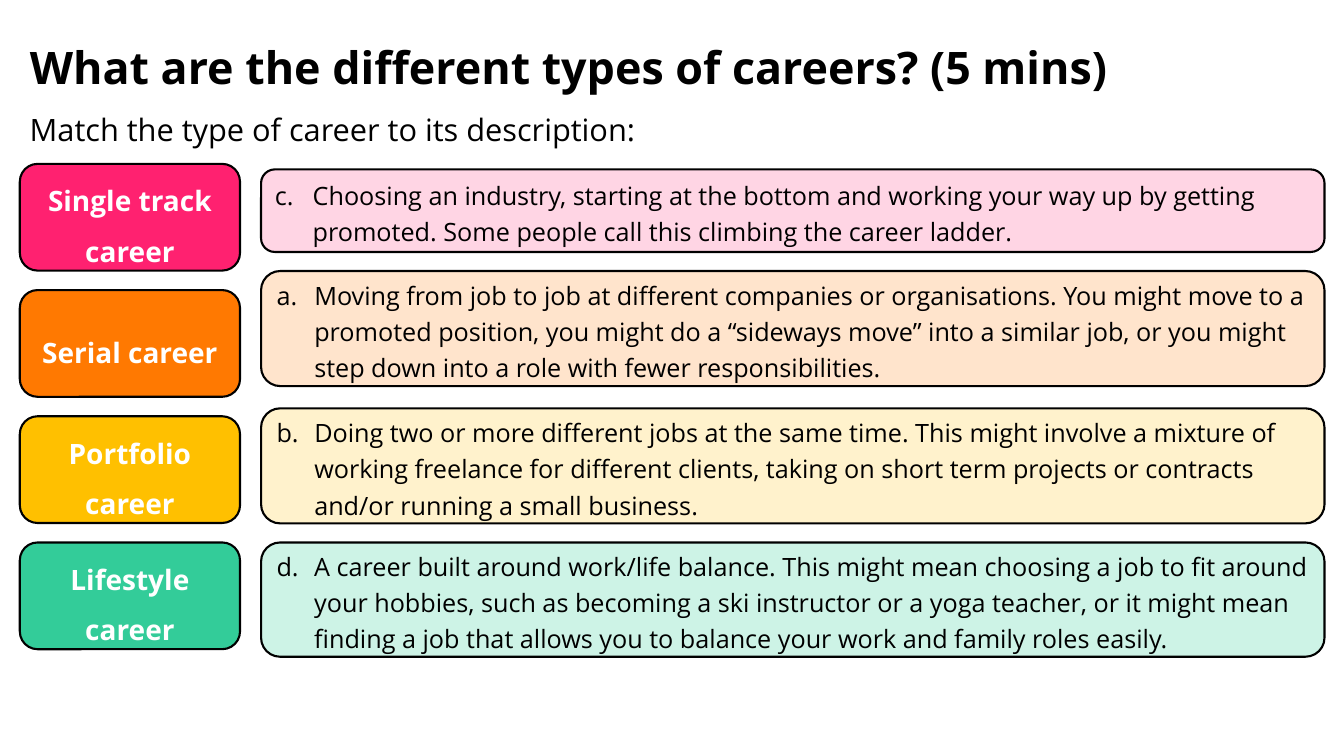
import pptx
import pptx.dml.color
import pptx.enum.shapes
import pptx.enum.text
import pptx.oxml.ns
import pptx.util
from lxml import etree

Cm = pptx.util.Cm
Pt = pptx.util.Pt
RGBColor = pptx.dml.color.RGBColor
PP_ALIGN = pptx.enum.text.PP_ALIGN
MSO_ANCHOR = pptx.enum.text.MSO_ANCHOR

FONT = "Open Sans"
BLACK = RGBColor(0x00, 0x00, 0x00)
WHITE = RGBColor(0xFF, 0xFF, 0xFF)
PINK = RGBColor(0xFF, 0x21, 0x70)
ORANGE = RGBColor(0xFF, 0x79, 0x01)
YELLOW = RGBColor(0xFF, 0xC0, 0x00)
GREEN = RGBColor(0x33, 0xCC, 0x99)
PALE_PINK = RGBColor(0xFF, 0xD5, 0xE4)
PALE_ORANGE = RGBColor(0xFF, 0xE4, 0xCC)
PALE_YELLOW = RGBColor(0xFF, 0xF2, 0xCC)
PALE_GREEN = RGBColor(0xCD, 0xF3, 0xE6)

CAREERS = [
    ("Single track career", PINK, 8),
    ("Serial career", ORANGE, 0),
    ("Portfolio career", YELLOW, 8),
    ("Lifestyle career", GREEN, 8),
]
DESCRIPTIONS = [
    (3, 0.14, 2.08, PALE_PINK,
     "Choosing an industry, starting at the bottom and working your way up by "
     "getting promoted. Some people call this climbing the career ladder."),
    (1, 2.7, 2.9, PALE_ORANGE,
     "Moving from job to job at different companies or organisations. You might "
     "move to a promoted position, you might do a “sideways move” into a similar "
     "job, or you might step down into a role with fewer responsibilities."),
    (2, 6.16, 2.9, PALE_YELLOW,
     "Doing two or more different jobs at the same time. This might involve a "
     "mixture of working freelance for different clients, taking on short term "
     "projects or contracts and/or running a small business."),
    (4, 9.54, 2.88, PALE_GREEN,
     "A career built around work/life balance. This might mean choosing a job to "
     "fit around your hobbies, such as becoming a ski instructor or a yoga teacher, "
     "or it might mean finding a job that allows you to balance your work and "
     "family roles easily."),
]


def write_text(s, text, size, color=BLACK, bold=False, align=PP_ALIGN.LEFT,
               anchor=MSO_ANCHOR.MIDDLE, spacing=1.0, after=0, letter=None):
    """Fill a shape with one formatted paragraph, lettered if a number is given."""
    tf = s.text_frame
    tf.word_wrap = True
    tf.auto_size = pptx.enum.text.MSO_AUTO_SIZE.NONE
    tf.vertical_anchor = anchor
    p = tf.paragraphs[0]
    if letter:
        pPr = p._p.get_or_add_pPr()
        pPr.set("marL", str(Cm(0.95)))
        pPr.set("indent", str(-Cm(0.95)))
        etree.SubElement(pPr, pptx.oxml.ns.qn("a:buAutoNum"),
                         type="alphaLcPeriod", startAt=str(letter))
    p.alignment = align
    p.line_spacing = spacing
    p.space_after = Pt(after)
    r = p.add_run()
    r.text = text
    r.font.name = FONT
    r.font.size = Pt(size)
    r.font.bold = bold
    r.font.color.rgb = color


def add_box(slide, left, top, width, height, fill):
    """Add a rounded, black-outlined box and return it."""
    s = slide.shapes.add_shape(pptx.enum.shapes.MSO_SHAPE.ROUNDED_RECTANGLE,
                               left, top, width, height)
    s.shadow.inherit = False
    s.fill.solid()
    s.fill.fore_color.rgb = fill
    s.line.color.rgb = BLACK
    s.line.width = Pt(1.5)
    return s


def add_heading(slide, left, top, width):
    """Place the title and the instruction under it."""
    title = slide.shapes.title
    title.left, title.top, title.width, title.height = left, top, width, Cm(1.85)
    write_text(title, "What are the different types of careers? (5 mins)", 32,
               bold=True, spacing=0.9)
    intro = slide.shapes.add_textbox(left, top + Cm(1.75), Cm(16.94), Cm(1.22))
    write_text(intro, "Match the type of career to its description:", 22,
               anchor=MSO_ANCHOR.TOP, spacing=1.07, after=8)


def add_careers(slide, left, top, width, pitch):
    """Stack the career names at an equal pitch."""
    for i, (name, fill, after) in enumerate(CAREERS):
        s = add_box(slide, left, top + i * pitch, width, Cm(2.69), fill)
        write_text(s, name, 20, color=WHITE, bold=True, align=PP_ALIGN.CENTER,
                   spacing=1.5, after=after)


def add_descriptions(slide, left, top, width):
    """Stack the lettered descriptions beside the career names."""
    for letter, offset, height, fill, text in DESCRIPTIONS:
        s = add_box(slide, left, top + Cm(offset), width, Cm(height), fill)
        write_text(s, text, 18, spacing=1.2, after=8, letter=letter)


def main():
    """Build and save the slide."""
    prs = pptx.Presentation()
    prs.slide_width, prs.slide_height = Cm(33.87), Cm(19.05)
    slide = prs.slides.add_slide(prs.slide_layouts.get_by_name("Title Only"))
    add_heading(slide, Cm(0.5), Cm(0.84), Cm(31.72))
    add_careers(slide, Cm(0.5), Cm(4.13), Cm(5.55), Cm(3.18))
    add_descriptions(slide, Cm(6.58), Cm(4.13), Cm(26.8))
    prs.save("out.pptx")


if __name__ == "__main__":
    main()
